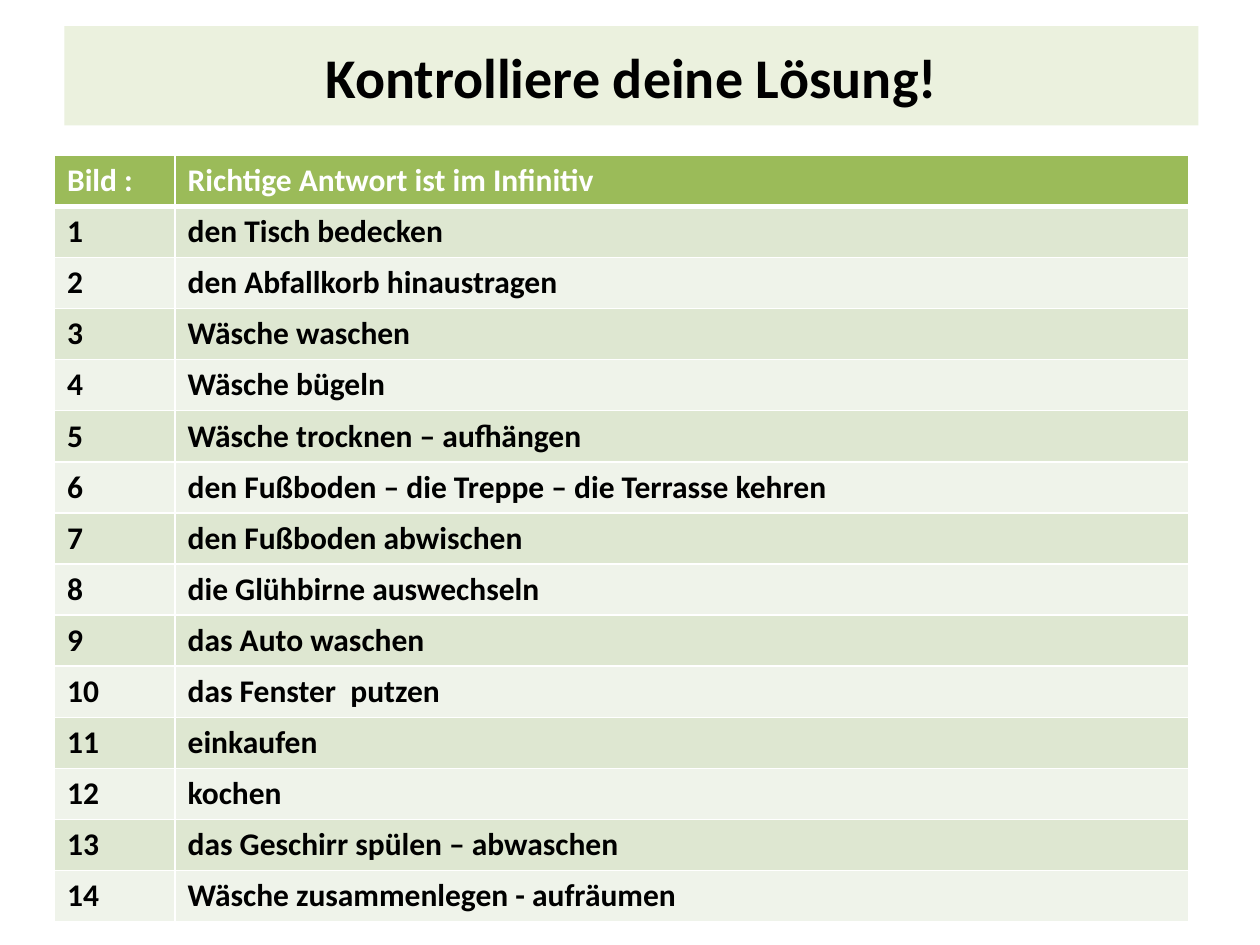
import dataclasses

import pptx
import pptx.dml.color
import pptx.enum.shapes
import pptx.enum.text
import pptx.oxml
import pptx.oxml.ns
import pptx.util
from pptx.util import Cm

COLORS = {
    "title_fill": "EBF1DE",
    "header_fill": "9BBB59",
    "odd_fill": "DEE7D1",
    "even_fill": "EFF3EA",
    "white": "FFFFFF",
    "black": "000000",
}
FONT = "Calibri"
ROW_HEIGHT = Cm(1.03)
COLUMN_WIDTHS = (Cm(2.43), Cm(20.43))
ANSWERS = [
    "den Tisch bedecken",
    "den Abfallkorb hinaustragen",
    "Wäsche waschen",
    "Wäsche bügeln",
    "Wäsche trocknen – aufhängen",
    "den Fußboden – die Treppe – die Terrasse kehren",
    "den Fußboden abwischen",
    "die Glühbirne auswechseln",
    "das Auto waschen",
    "das Fenster  putzen",
    "einkaufen",
    "kochen",
    "das Geschirr spülen – abwaschen",
    "Wäsche zusammenlegen - aufräumen",
]


@dataclasses.dataclass
class AnswerRow:
    texts: tuple[str, str]
    fill: str
    color: str = "black"
    top_border: int = 1
    bottom_border: int = 1


def rgb(name: str) -> pptx.dml.color.RGBColor:
    return pptx.dml.color.RGBColor.from_string(COLORS[name])


def add_run(para, text: str, size: int, color: str) -> None:
    run = para.add_run()
    run.text = text
    run.font.name = FONT
    run.font.size = pptx.util.Pt(size)
    run.font.bold = True
    run.font.color.rgb = rgb(color)


def add_border(cell, side: str, width: int) -> None:
    namespace = pptx.oxml.ns.nsdecls("a")
    line = pptx.oxml.parse_xml(
        f'<a:ln{side} {namespace} w="{pptx.util.Pt(width)}"><a:solidFill>'
        f'<a:srgbClr val="{COLORS["white"]}"/></a:solidFill></a:ln{side}>'
    )
    cell._tc.get_or_add_tcPr().append(line)


def draw_row(table, index: int, row: AnswerRow) -> None:
    table.rows[index].height = ROW_HEIGHT
    borders = {"L": 1, "R": 1, "T": row.top_border, "B": row.bottom_border}
    for column, text in enumerate(row.texts):
        cell = table.cell(index, column)
        for side, width in borders.items():
            add_border(cell, side, width)
        cell.fill.solid()
        cell.fill.fore_color.rgb = rgb(row.fill)
        add_run(cell.text_frame.paragraphs[0], text, 18, row.color)


def draw_title(page, text: str) -> None:
    box = page.shapes.add_shape(
        pptx.enum.shapes.MSO_SHAPE.RECTANGLE, Cm(1.3), Cm(0.53), Cm(22.86), Cm(2)
    )
    box.shadow.inherit = False
    box.fill.solid()
    box.fill.fore_color.rgb = rgb("title_fill")
    box.line.fill.background()
    box.text_frame.word_wrap = True
    box.text_frame.vertical_anchor = pptx.enum.text.MSO_ANCHOR.MIDDLE
    para = box.text_frame.paragraphs[0]
    para.alignment = pptx.enum.text.PP_ALIGN.CENTER
    add_run(para, text, 32, "black")


def draw_answers(page, rows: list[AnswerRow]) -> None:
    frame = page.shapes.add_table(
        len(rows), len(COLUMN_WIDTHS), Cm(1.1), Cm(3.13),
        sum(COLUMN_WIDTHS), ROW_HEIGHT * len(rows),
    )
    table = frame.table
    for column, width in zip(table.columns, COLUMN_WIDTHS):
        column.width = width
    for index, row in enumerate(rows):
        draw_row(table, index, row)


def main() -> None:
    deck = pptx.Presentation()
    deck.slide_width, deck.slide_height = Cm(25.4), Cm(19.05)
    page = deck.slides.add_slide(deck.slide_layouts[6])

    # Title band
    draw_title(page, "Kontrolliere deine Lösung!")

    # Answer table: header, then numbered rows in alternating shades
    rows = [AnswerRow(("Bild :", "Richtige Antwort ist im Infinitiv"),
                      "header_fill", "white", bottom_border=3)]
    for number, answer in enumerate(ANSWERS, start=1):
        fill = "odd_fill" if number % 2 else "even_fill"
        top_border = 3 if number == 1 else 1
        rows.append(AnswerRow((str(number), answer), fill, top_border=top_border))
    draw_answers(page, rows)

    deck.save("out.pptx")


if __name__ == "__main__":
    main()
